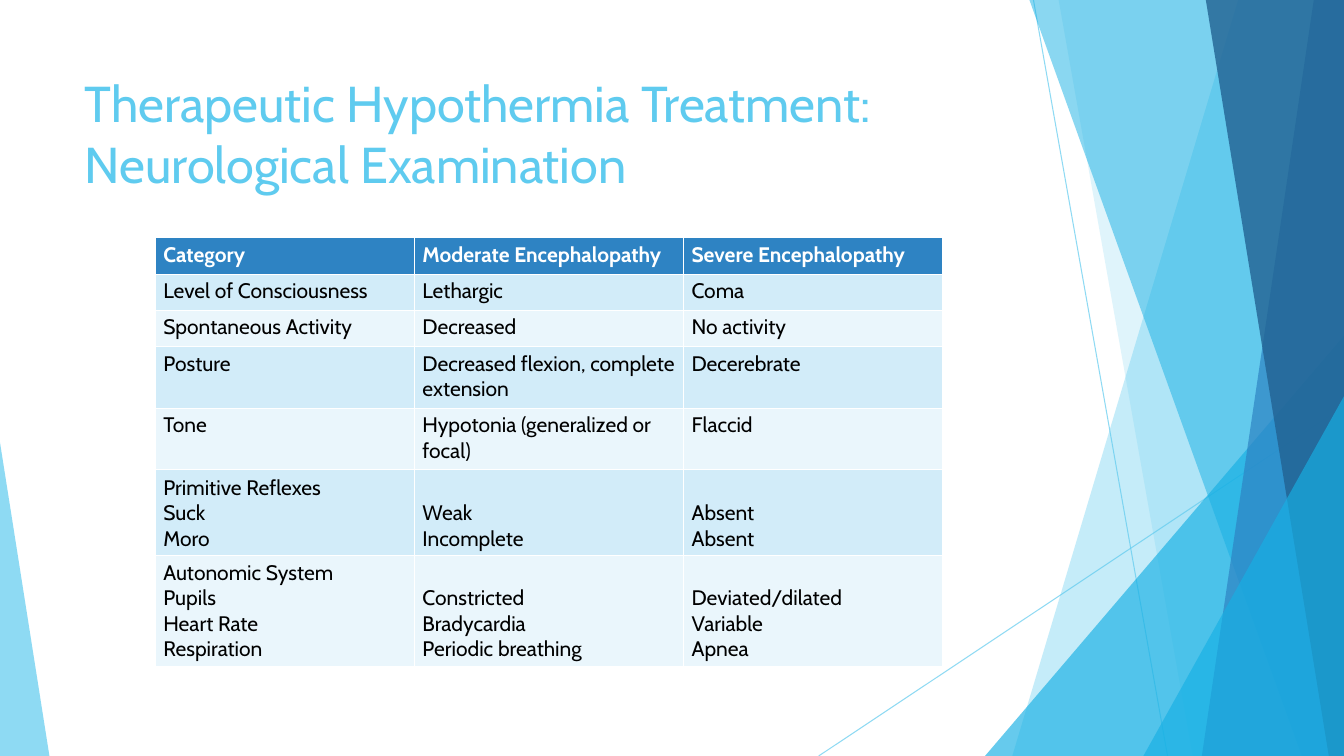
import pptx
import pptx.dml.color
import pptx.enum.shapes
import pptx.enum.text
import pptx.oxml.ns
import pptx.util
from lxml import etree

Inches = pptx.util.Inches
Pt = pptx.util.Pt
MSO_SHAPE = pptx.enum.shapes.MSO_SHAPE
ANCHOR = pptx.enum.text.MSO_ANCHOR
qn = pptx.oxml.ns.qn

FONT = "Cabin"
COLORS = {
    "sky": "5FCBEF", "cyan": "17B0E4", "blue": "2E83C3", "navy": "226292",
    "band_dark": "D2ECF9", "band_light": "EAF6FC", "white": "FFFFFF", "black": "000000",
}
COLUMN_WIDTHS = [2.57, 2.67, 2.57]
ROW_HEIGHTS = [0.36, 0.36, 0.36, 0.61, 0.61, 0.85, 1.1]
ROWS = [
    ["Category", "Moderate Encephalopathy", "Severe Encephalopathy"],
    ["Level of Consciousness", "Lethargic", "Coma"],
    ["Spontaneous Activity", "Decreased", "No activity"],
    ["Posture", "Decreased flexion, complete extension", "Decerebrate"],
    ["Tone", "Hypotonia (generalized or focal)", "Flaccid"],
    ["Primitive Reflexes\nSuck\nMoro", "Weak\nIncomplete", "Absent\nAbsent"],
    ["Autonomic System\nPupils\nHeart Rate\nRespiration",
     "Constricted\nBradycardia\nPeriodic breathing", "Deviated/dilated\nVariable\nApnea"],
]


def rgb(name):
    """Return the named colour."""
    return pptx.dml.color.RGBColor.from_string(COLORS[name])


def set_alpha(fill, percent):
    """Make the solid fill of an XML element partly opaque."""
    color = fill.find(qn("a:solidFill"))[0]
    etree.SubElement(color, qn("a:alpha"), val=str(percent * 1000))


def style_facet(sp, color, opacity):
    """Give a facet its translucent fill without line or shadow."""
    sp.shadow.inherit = False
    sp.fill.solid()
    sp.fill.fore_color.rgb = rgb(color)
    sp.line.fill.background()
    set_alpha(sp.element.spPr, opacity)


def add_band(s, box, top_x, bottom_x, color, opacity):
    """Draw a band from a slanted left edge to the right edge of the box."""
    left, top, width, height = box
    right, bottom = left + width, top + height
    fb = s.shapes.build_freeform(Inches(left + top_x), Inches(top), scale=1.0)
    corners = [(right, top), (right, bottom), (left + bottom_x, bottom)]
    fb.add_line_segments([(Inches(x), Inches(y)) for x, y in corners], close=True)
    style_facet(fb.convert_to_shape(), color, opacity)


def add_triangle(s, box, apex, color, opacity):
    """Draw a triangle filling the box, with its apex at the given share of the width."""
    sp = s.shapes.add_shape(MSO_SHAPE.ISOSCELES_TRIANGLE, *map(Inches, box))
    sp.adjustments[0] = apex
    style_facet(sp, color, opacity)


def add_thin_line(s, start, end):
    """Draw a translucent hairline."""
    cn = s.shapes.add_connector(
        pptx.enum.shapes.MSO_CONNECTOR.STRAIGHT, *map(Inches, start + end))
    cn.line.width = Pt(0.75)
    cn.line.color.rgb = rgb("sky")
    set_alpha(cn.line._get_or_add_ln(), 70)
    etree.SubElement(cn.element.spPr, qn("a:effectLst"))


def add_facets(s, box):
    """Draw the overlapping facets on the right of the slide."""
    left, top, width, height = box
    right, bottom = left + width, top + height
    add_thin_line(s, (left + 2.13, top), (left + 3.46, bottom))
    add_thin_line(s, (right, top + 4.03), (left, bottom))
    add_band(s, box, 4.16, 1.92, "sky", 36)
    add_band(s, box, 2.38, 3.71, "sky", 20)
    add_triangle(s, (right - 3.56, bottom - 4.17, 3.56, 4.17), 1, "cyan", 66)
    add_band(s, box, 2.09, 4.79, "cyan", 50)
    add_band(s, box, 4.91, 3.8, "blue", 70)
    add_band(s, box, 3.84, 5.06, "navy", 80)
    add_triangle(s, (right - 1.99, bottom - 3.57, 1.99, 3.57), 1, "cyan", 66)


def add_run(p, text, size, color, bold=False):
    """Add one formatted run to a paragraph."""
    r = p.add_run()
    r.text = text
    r.font.name = FONT
    r.font.size = Pt(size)
    r.font.bold = bold
    r.font.color.rgb = rgb(color)


def add_title(s, box, lines):
    """Write the title, one line per item."""
    tf = s.shapes.add_textbox(*map(Inches, box)).text_frame
    tf.word_wrap = True
    tf.vertical_anchor = ANCHOR.TOP
    p = tf.paragraphs[0]
    for i, line in enumerate(lines):
        if i:
            p.add_line_break()
        add_run(p, line, 36, "sky")


def fill_cell(cell, text, fill, color, bold):
    """Fill a table cell with one paragraph per line of text."""
    cell.margin_left = cell.margin_right = Inches(0.08)
    cell.margin_top = cell.margin_bottom = Inches(0.04)
    cell.fill.solid()
    cell.fill.fore_color.rgb = rgb(fill)
    lines = text.split("\n")
    cell.vertical_anchor = ANCHOR.BOTTOM if len(lines) > 1 else ANCHOR.TOP
    tf = cell.text_frame
    for i, line in enumerate(lines):
        p = tf.add_paragraph() if i else tf.paragraphs[0]
        add_run(p, line, 15, color, bold)


def add_examination_table(s, box):
    """Build the table of neurological findings."""
    table = s.shapes.add_table(len(ROWS), len(COLUMN_WIDTHS), *map(Inches, box)).table
    for column, width in zip(table.columns, COLUMN_WIDTHS):
        column.width = Inches(width)
    for i, (row, height, texts) in enumerate(zip(table.rows, ROW_HEIGHTS, ROWS)):
        row.height = Inches(height)
        header = i == 0
        fill = "blue" if header else "band_dark" if i % 2 else "band_light"
        for cell, text in zip(row.cells, texts):
            fill_cell(cell, text, fill, "white" if header else "black", header)


def main():
    """Build and save the slide."""
    prs = pptx.Presentation()
    prs.slide_width, prs.slide_height = Inches(13.33), Inches(7.5)
    s = prs.slides.add_slide(prs.slide_layouts[6])
    add_facets(s, (8.12, 0, 5.21, 7.5))
    add_triangle(s, (0, 4.39, 0.49, 3.11), 0, "sky", 70)
    add_title(s, (0.74, 0.67, 9.4, 1.44),
              ["Therapeutic Hypothermia Treatment:", "Neurological Examination"])
    add_examination_table(s, (1.54, 2.36, sum(COLUMN_WIDTHS), sum(ROW_HEIGHTS)))
    prs.save("out.pptx")


if __name__ == "__main__":
    main()
